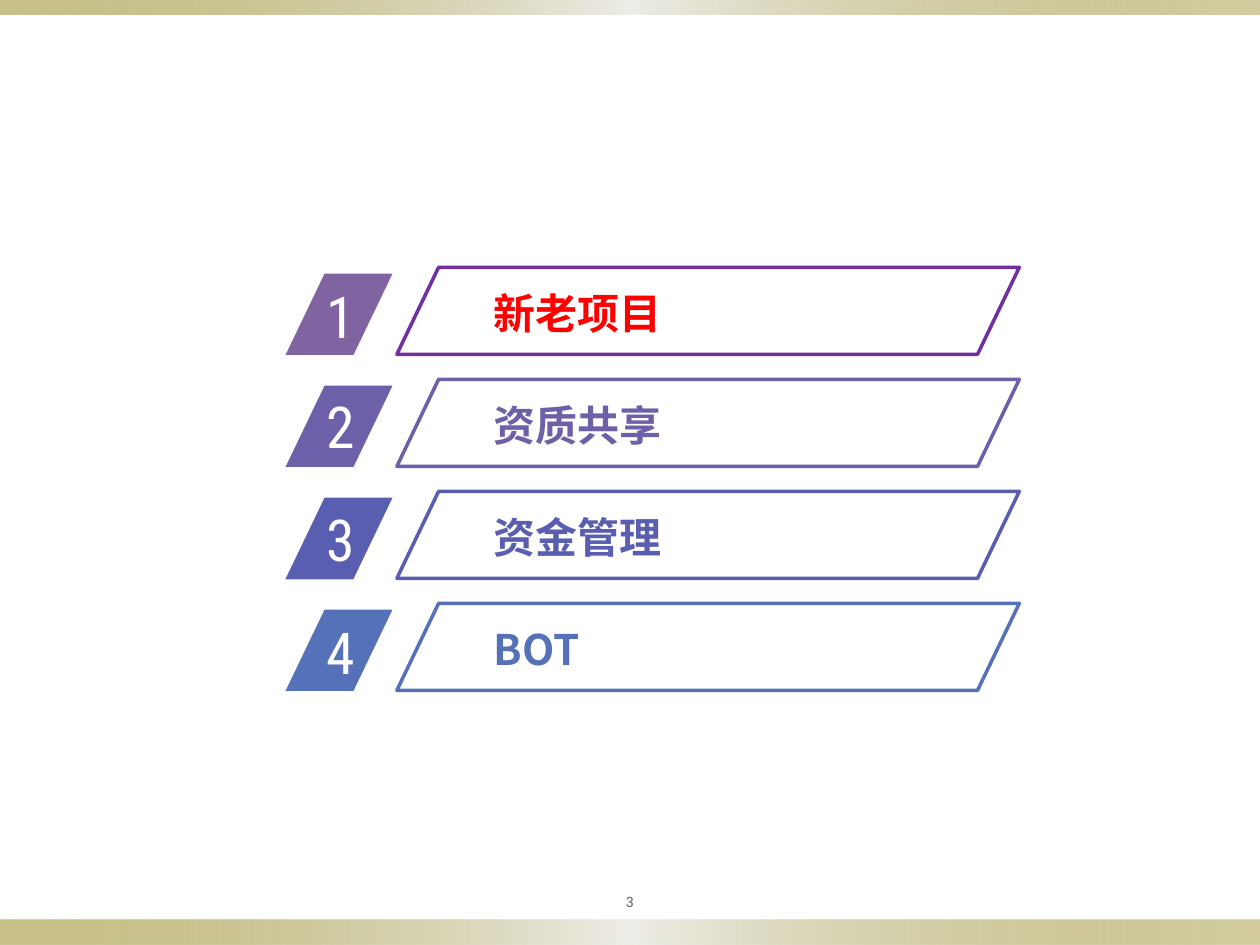
from lxml import etree
from pptx import Presentation
from pptx import util as u
from pptx.dml import color
from pptx.enum import shapes, text
from pptx.oxml import ns

COLORS = {
    "gold": "918415", "pale": "EEEDE8", "white": "FFFFFF", "gray": "636363",
    "red": "FF0000", "plum": "8064A2", "purple": "7030A0",
    "violet": "6E5FA9", "indigo": "5A5EB1", "blue": "5572B8",
}


class Deck:
    """Holds the style and the current slide, and draws its elements."""

    def __init__(self, slide):
        self.slide = slide
        self.bold = "Noto Sans CJK SC"
        self.thin = "Roboto Condensed"
        self.plain = "Roboto"

    def rgb(self, name):
        return color.RGBColor.from_string(COLORS[name])

    def shape(self, kind, box):
        item = self.slide.shapes.add_shape(kind, *map(u.Pt, box))
        item.shadow.inherit = False
        return item

    def band(self, top, height):
        item = self.shape(shapes.MSO_SHAPE.RECTANGLE, (0, top, 720, height))
        item.line.fill.background()
        item.fill.gradient()
        item.fill.gradient_angle = 0
        stops = item._element.spPr.find(".//" + ns.qn("a:gsLst"))
        for stop in list(stops):
            stops.remove(stop)
        for pos, name, alpha in ((0, "gold", 50), (50, "pale", 100), (100, "gold", 40)):
            stop = etree.SubElement(stops, ns.qn("a:gs"), pos=str(pos * 1000))
            tone = etree.SubElement(stop, ns.qn("a:srgbClr"), val=COLORS[name])
            etree.SubElement(tone, ns.qn("a:alpha"), val=str(alpha * 1000))

    def slant(self, box, line, width, fill=None):
        item = self.shape(shapes.MSO_SHAPE.PARALLELOGRAM, box)
        item.adjustments[0] = 0.48
        if fill:
            item.fill.solid()
            item.fill.fore_color.rgb = self.rgb(fill)
        else:
            item.fill.background()
        item.line.color.rgb = self.rgb(line)
        item.line.width = u.Pt(width)

    def label(self, box, words, size, face, tone, bold=False, center=False):
        frame = self.slide.shapes.add_textbox(*map(u.Pt, box)).text_frame
        frame.word_wrap = True
        if center:
            frame.vertical_anchor = text.MSO_ANCHOR.MIDDLE
            frame.margin_left = frame.margin_right = u.Pt(3.6)
            frame.paragraphs[0].alignment = text.PP_ALIGN.CENTER
        run = frame.paragraphs[0].add_run()
        run.text = words
        run.font.size = u.Pt(size)
        run.font.bold = bold
        run.font.name = face
        run.font.color.rgb = self.rgb(tone)
        etree.SubElement(run._r.get_or_add_rPr(), ns.qn("a:ea"), typeface=face)


def main():
    show = Presentation()
    show.slide_width, show.slide_height = u.Pt(720), u.Pt(540)
    deck = Deck(show.slides.add_slide(show.slide_layouts[6]))
    deck.band(525.6, 14.4)
    deck.band(0, 8.6)
    deck.label((324, 504, 72, 22.3), "3", 8.2, deck.plain, "gray", center=True)

    rows = (
        ("新老项目", "plum", "red", "purple", 157),
        ("资质共享", "violet", "violet", "violet", 219.6),
        ("资金管理", "indigo", "indigo", "indigo", 284.4),
        ("BOT", "blue", "blue", "blue", 349.2),
    )
    for i, (words, fill, tone, edge, top) in enumerate(rows):
        drop = 64 * i
        deck.slant((160.6, 154.8 + drop, 66.2, 49.7), "white", 3, fill)
        deck.label((179.3, top, 62.6, 47.5), str(i + 1), 33, deck.thin, "white")
        deck.label((275, 160.6 + drop, 198, 36), words, 24, deck.bold, tone, bold=True)
        deck.slant((226.8, 152.8 + drop, 355.7, 49.7), edge, 2)
    show.save("out.pptx")


if __name__ == "__main__":
    main()
